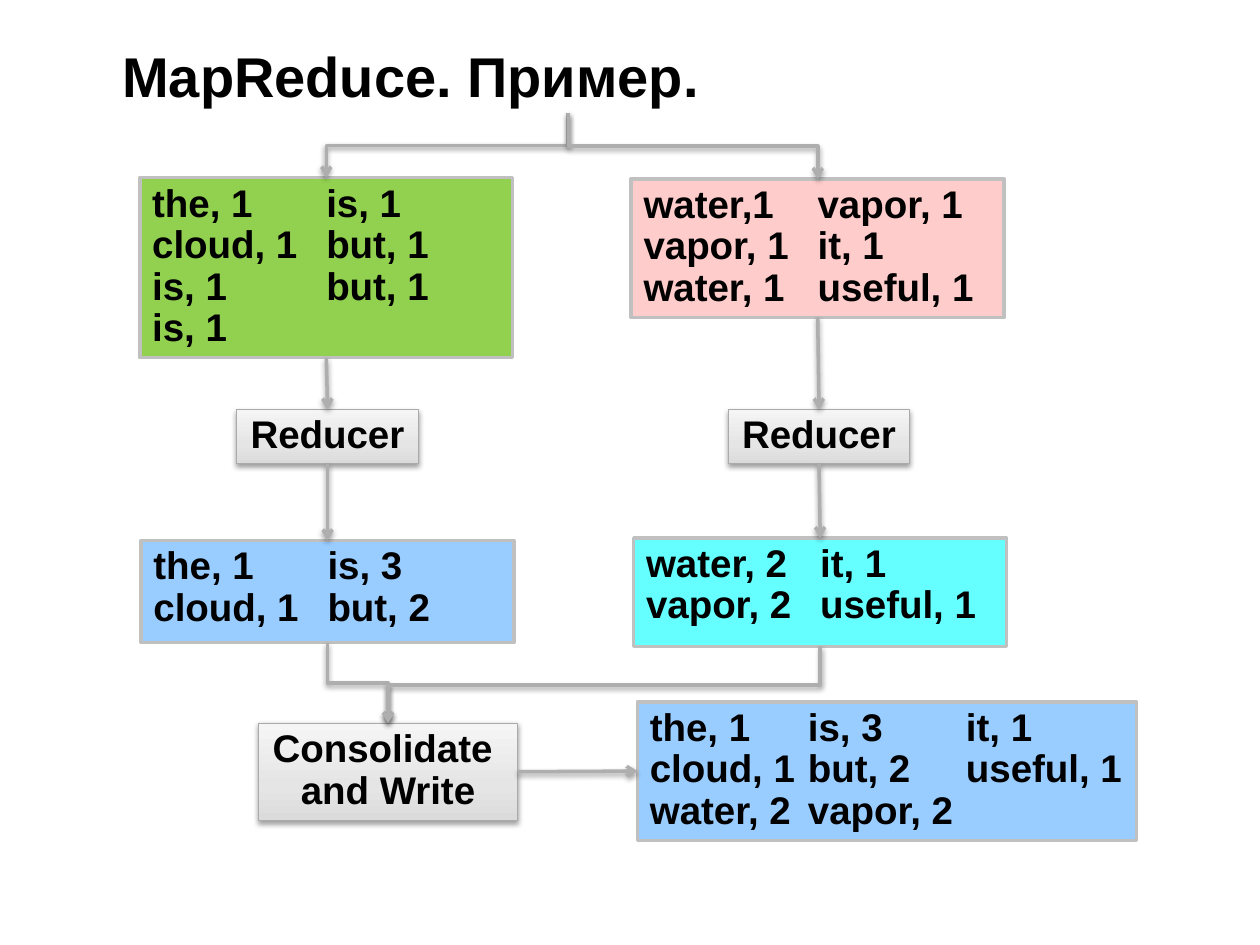
"""Build the MapReduce example slide with its word-count flow diagram."""
import copy

import lxml.etree
import pptx
import pptx.dml.color
import pptx.enum.shapes
import pptx.enum.text
import pptx.oxml.ns
import pptx.util
from pptx.util import Inches

qn = pptx.oxml.ns.qn


def color(value):
    """Turn a hex string into a colour."""
    return pptx.dml.color.RGBColor.from_string(value)


def add_shadow(shape):
    """Give a shape or connector a soft shadow below it."""
    properties = shape._element.spPr
    effects = properties.find(qn("a:effectLst"))
    if effects is None:
        effects = lxml.etree.SubElement(properties, qn("a:effectLst"))
    shadow = lxml.etree.SubElement(
        effects, qn("a:outerShdw"), blurRad="40000", dist="20000", dir="5400000", rotWithShape="0"
    )
    black = lxml.etree.SubElement(shadow, qn("a:srgbClr"), val="000000")
    lxml.etree.SubElement(black, qn("a:alpha"), val="38000")


presentation = pptx.Presentation()
presentation.slide_width = Inches(10)
presentation.slide_height = Inches(7.5)
slide = presentation.slides.add_slide(presentation.slide_layouts[5])

title = slide.shapes.title
title.left, title.top, title.width, title.height = [Inches(n) for n in (0.97, 0.33, 8.29, 1.03)]
frame = title.text_frame
frame.text = "MapReduce. Пример."
frame.auto_size = pptx.enum.text.MSO_AUTO_SIZE.NONE
frame.vertical_anchor = pptx.enum.text.MSO_ANCHOR.TOP
frame.margin_left = frame.margin_top = frame.margin_right = frame.margin_bottom = 0
frame.paragraphs[0].alignment = pptx.enum.text.PP_ALIGN.LEFT
font = frame.paragraphs[0].runs[0].font
font.name, font.size, font.bold = "Arial", pptx.util.Pt(32), True
font.color.rgb = color("000000")

boxes = {
    "left pairs": (1.11, 1.41, 2.96, 1.43, "92D050", 2,
                   "the, 1\ncloud, 1\nis, 1\nis, 1\nis, 1\nbut, 1\nbut, 1"),
    "right pairs": (5.01, 1.42, 2.96, 1.1, "FFCCCC", 2,
                    "water,1\nvapor, 1\nwater, 1\nvapor, 1\nit, 1\nuseful, 1"),
    "left reducer": (1.88, 3.25, 1.44, 0.43, None, 1, "Reducer"),
    "right reducer": (5.78, 3.25, 1.44, 0.43, None, 1, "Reducer"),
    "left counts": (1.12, 4.29, 2.96, 0.81, "99CCFF", 2, "the, 1\ncloud, 1\nis, 3\nbut, 2"),
    "right counts": (5.03, 4.27, 2.96, 0.86, "66FFFF", 2, "water, 2\nvapor, 2\nit, 1\nuseful, 1"),
    "result": (5.06, 5.57, 3.96, 1.1, "99CCFF", 3,
               "the, 1\ncloud, 1\nwater, 2\nis, 3\nbut, 2\nvapor, 2\nit, 1\nuseful, 1"),
    "writer": (2.05, 5.74, 2.06, 0.77, None, 1, "Consolidate \nand Write"),
}
shapes = {}
for name, (left, top, width, height, fill, columns, text) in boxes.items():
    shape = slide.shapes.add_shape(
        pptx.enum.shapes.MSO_SHAPE.RECTANGLE, Inches(left), Inches(top), Inches(width), Inches(height)
    )
    shapes[name] = shape
    shape.shadow.inherit = False
    frame = shape.text_frame
    frame.vertical_anchor = pptx.enum.text.MSO_ANCHOR.TOP
    paragraph = frame.paragraphs[0]
    paragraph.text = text
    paragraph.line_spacing = 0.9
    if fill:
        shape.fill.solid()
        shape.fill.fore_color.rgb = color(fill)
        shape.line.color.rgb = color("C0C0C0")
        shape.line.width = pptx.util.Pt(2)
        frame.word_wrap = True
        frame._txBody.bodyPr.set("numCol", str(columns))
        paragraph.alignment = pptx.enum.text.PP_ALIGN.LEFT
    else:
        shape.fill.gradient()
        shape.fill.gradient_angle = 90
        stop_list = shape._element.spPr.find(qn("a:gradFill")).find(qn("a:gsLst"))
        stop_list.insert(1, copy.deepcopy(stop_list[0]))
        stops = ((0, "DBDBDB"), (0.35, "E5E5E5"), (1, "F5F5F5"))
        for stop, (position, shade) in zip(shape.fill.gradient_stops, stops):
            stop.position = position
            stop.color.rgb = color(shade)
        shape.line.color.rgb = color("AAAAAA")
        shape.line.width = pptx.util.Pt(0.75)
        add_shadow(shape)
        frame.word_wrap = False
        frame.auto_size = pptx.enum.text.MSO_AUTO_SIZE.SHAPE_TO_FIT_TEXT
        paragraph.alignment = pptx.enum.text.PP_ALIGN.CENTER
    for run in paragraph.runs:
        run.font.name, run.font.size, run.font.bold = "Arial", pptx.util.Pt(22), True
        run.font.color.rgb = color("000000")

connectors = []
straight_links = [
    ("left pairs", 2, "left reducer", 0),
    ("right pairs", 2, "right reducer", 0),
    ("left reducer", 2, "left counts", 0),
    ("right reducer", 2, "right counts", 0),
    ("writer", 3, "result", 1),
]
for source, source_site, target, target_site in straight_links:
    connector = slide.shapes.add_connector(pptx.enum.shapes.MSO_CONNECTOR.STRAIGHT, 0, 0, 0, 0)
    connector.begin_connect(shapes[source], source_site)
    connector.end_connect(shapes[target], target_site)
    connectors.append(connector)

bent_links = [
    (4.51, 0.9, 2.59, 1.41),
    (4.51, 0.9, 6.49, 1.42),
    (2.6, 5.1, 3.08, 5.74),
    (6.51, 5.13, 3.08, 5.74),
]
for start_x, start_y, end_x, end_y in bent_links:
    width, height = end_y - start_y, abs(end_x - start_x)
    connector = slide.shapes.add_connector(pptx.enum.shapes.MSO_CONNECTOR.ELBOW, 0, 0, 0, 0)
    connector.left = Inches((start_x + end_x - width) / 2)
    connector.top = Inches((start_y + end_y - height) / 2)
    connector.width, connector.height = Inches(width), Inches(height)
    transform = connector._element.spPr.find(qn("a:xfrm"))
    if end_x > start_x:
        transform.set("rot", str(270 * 60000))
        transform.set("flipH", "1")
    else:
        transform.set("rot", str(90 * 60000))
    connectors.append(connector)

for connector in connectors:
    connector.line.color.rgb = color("AEAEAE")
    connector.line.width = pptx.util.Pt(2)
    line = connector._element.spPr.find(qn("a:ln"))
    lxml.etree.SubElement(line, qn("a:tailEnd"), type="arrow")
    add_shadow(connector)

presentation.save("out.pptx")
